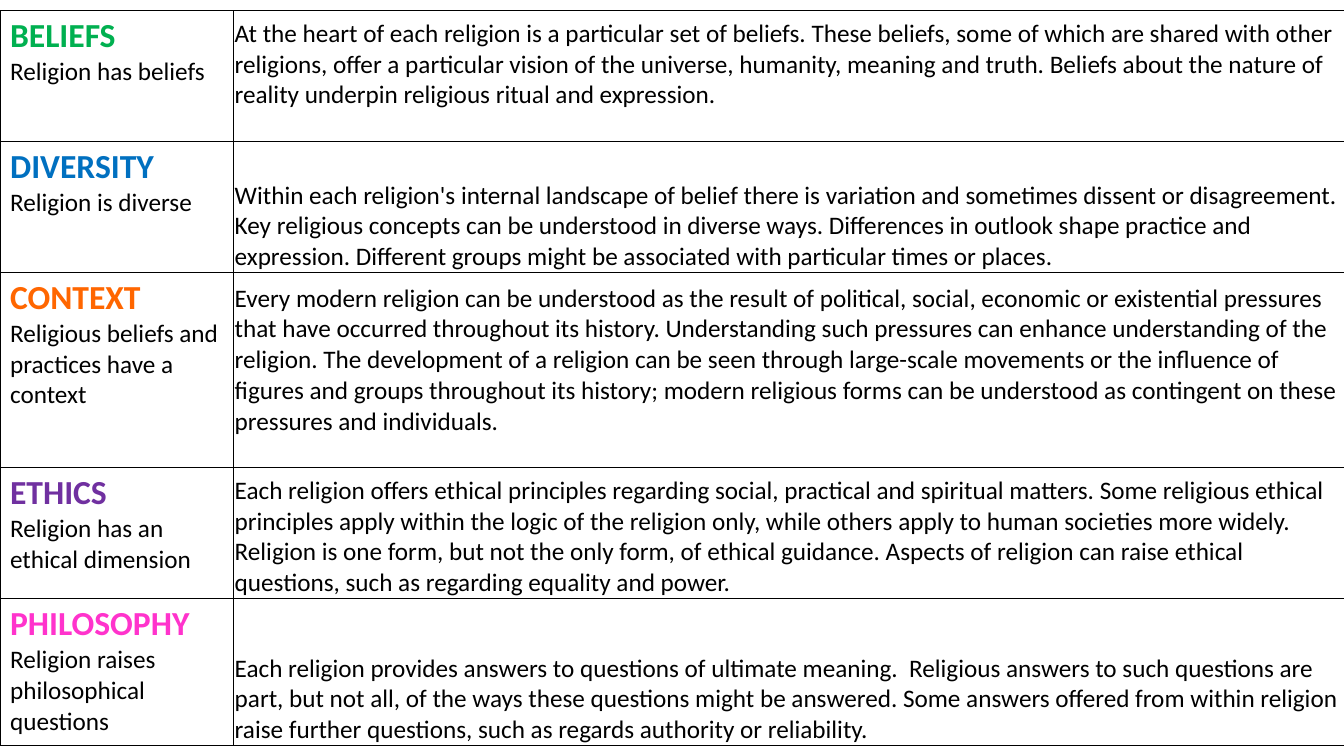
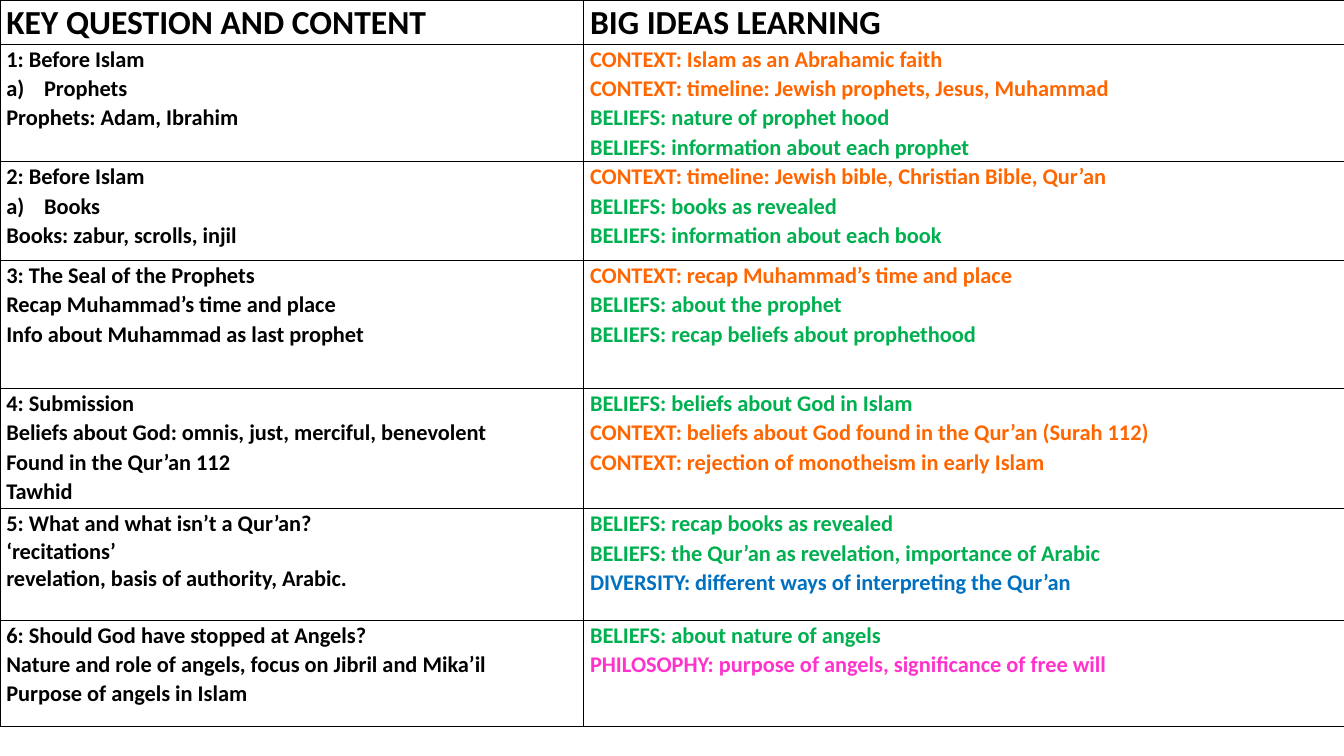
from lxml import etree
from pptx import Presentation
from pptx.dml.color import RGBColor
from pptx.enum.text import MSO_ANCHOR
from pptx.oxml.ns import qn
from pptx.util import Pt

TOP, BOTTOM = MSO_ANCHOR.TOP, MSO_ANCHOR.BOTTOM
FONT = "Calibri"
BLACK = "000000"
IDEA_COLORS = {
    "BELIEFS": "00B050",
    "DIVERSITY": "0070C0",
    "CONTEXT": "FF6600",
    "ETHICS": "7030A0",
    "PHILOSOPHY": "FF33CC",
}
SLIDE_WIDTH, SLIDE_HEIGHT = 960, 540
BORDER_WIDTH = 0.5
HEADING_SIZE, BODY_SIZE, LESSON_SIZE = 24, 18, 16
LESSON_SPACING = 1.07
LETTER_INDENT = 27

# Cell margins: left, top, right, bottom
IDEA_MARGINS = (7.2, 3.6, 7.2, 3.6)
LESSON_MARGINS = (4.5, 0, 4.5, 0)

IDEAS_TOP = 7.5
IDEA_COLUMNS = (167, SLIDE_WIDTH - 167)
# Name, summary, explanation, row height, space below the explanation
IDEAS = [
    ("BELIEFS", "Religion has beliefs",
     "At the heart of each religion is a particular set of beliefs. These beliefs, some of which are "
     "shared with other religions, offer a particular vision of the universe, humanity, meaning and "
     "truth. Beliefs about the nature of reality underpin religious ritual and expression.",
     93.5, 22),
    ("DIVERSITY", "Religion is diverse",
     "Within each religion's internal landscape of belief there is variation and sometimes dissent or "
     "disagreement. Key religious concepts can be understood in diverse ways. Differences in outlook "
     "shape practice and expression. Different groups might be associated with particular times or "
     "places.",
     93.5, 0),
    ("CONTEXT", "Religious beliefs and practices have a context",
     "Every modern religion can be understood as the result of political, social, economic or "
     "existential pressures that have occurred throughout its history. Understanding such pressures "
     "can enhance understanding of the religion. The development of a religion can be seen through "
     "large-scale movements or the influence of figures and groups throughout its history; modern "
     "religious forms can be understood as contingent on these pressures and individuals.",
     139.5, 22),
    ("ETHICS", "Religion has an ethical dimension",
     "Each religion offers ethical principles regarding social, practical and spiritual matters. Some "
     "religious ethical principles apply within the logic of the religion only, while others apply to "
     "human societies more widely. Religion is one form, but not the only form, of ethical guidance. "
     "Aspects of religion can raise ethical questions, such as regarding equality and power.",
     93.5, 0),
    ("PHILOSOPHY", "Religion raises philosophical questions",
     "Each religion provides answers to questions of ultimate meaning.  Religious answers to such "
     "questions are part, but not all, of the ways these questions might be answered. Some answers "
     "offered from within religion raise further questions, such as regards authority or reliability.",
     105, 0),
]

LESSON_COLUMNS = (417, SLIDE_WIDTH - 417)
LESSON_HEADINGS = ("KEY QUESTION AND CONTENT", "BIG IDEAS LEARNING")
LESSON_HEADING_HEIGHT = 31
LETTERED = {"Prophets", "Books"}
SINGLE_SPACED = {"‘recitations’", "revelation, basis of authority, Arabic."}
# Content lines, learning lines, row height
LESSONS = [
    (["1: Before Islam", "Prophets", "Prophets: Adam, Ibrahim"],
     ["CONTEXT: Islam as an Abrahamic faith",
      "CONTEXT: timeline: Jewish prophets, Jesus, Muhammad",
      "BELIEFS: nature of prophet hood",
      "BELIEFS: information about each prophet"], 84),
    (["2: Before Islam", "Books", "Books: zabur, scrolls, injil"],
     ["CONTEXT: timeline: Jewish bible, Christian Bible, Qur’an",
      "BELIEFS: books as revealed",
      "BELIEFS: information about each book"], 70.5),
    (["3: The Seal of the Prophets", "Recap Muhammad’s time and place",
      "Info about Muhammad as last prophet"],
     ["CONTEXT: recap Muhammad’s time and place",
      "BELIEFS: about the prophet",
      "BELIEFS: recap beliefs about prophethood"], 91.5),
    (["4: Submission", "Beliefs about God: omnis, just, merciful, benevolent",
      "Found in the Qur’an 112", "Tawhid"],
     ["BELIEFS: beliefs about God in Islam",
      "CONTEXT: beliefs about God found in the Qur’an (Surah 112)",
      "CONTEXT: rejection of monotheism in early Islam"], 86),
    (["5: What and what isn’t a Qur’an?", "‘recitations’",
      "revelation, basis of authority, Arabic."],
     ["BELIEFS: recap books as revealed",
      "BELIEFS: the Qur’an as revelation, importance of Arabic",
      "DIVERSITY: different ways of interpreting the Qur’an"], 79.5),
    (["6: Should God have stopped at Angels?",
      "Nature and role of angels, focus on Jibril and Mika’il",
      "Purpose of angels in Islam"],
     ["BELIEFS: about nature of angels",
      "PHILOSOPHY: purpose of angels, significance of free will"], 76),
]


def color(hex_string):
    return RGBColor.from_string(hex_string)


def idea_color(text):
    """Return the colour of the big idea named before the first colon."""
    return color(IDEA_COLORS.get(text.split(":")[0], BLACK))


def set_attributes(target, values):
    for name, value in values.items():
        setattr(target, name, value)


def add_borders(cell):
    properties = cell._tc.get_or_add_tcPr()
    for position, side in enumerate(("lnL", "lnR", "lnT", "lnB")):
        line = etree.Element(qn(f"a:{side}"), w=str(Pt(BORDER_WIDTH)))
        fill = etree.SubElement(line, qn("a:solidFill"))
        etree.SubElement(fill, qn("a:srgbClr"), val=BLACK)
        properties.insert(position, line)


def add_letter(paragraph):
    """Number the paragraph a), with a hanging indent."""
    properties = paragraph._p.get_or_add_pPr()
    properties.set("marL", str(Pt(LETTER_INDENT)))
    properties.set("indent", str(-Pt(LETTER_INDENT)))
    etree.SubElement(properties, qn("a:buFont"), typeface="+mj-lt")
    etree.SubElement(properties, qn("a:buAutoNum"), type="alphaLcParenR")


def fill_cell(cell, lines, margins, anchor=TOP, spacing=None):
    """Write lines of (text, size, bold), one paragraph each."""
    left, top, right, bottom = map(Pt, margins)
    set_attributes(cell, {"margin_left": left, "margin_top": top, "margin_right": right,
                          "margin_bottom": bottom, "vertical_anchor": anchor})
    cell.fill.background()
    add_borders(cell)
    frame = cell.text_frame
    for index, (text, size, bold) in enumerate(lines):
        paragraph = frame.add_paragraph() if index else frame.paragraphs[0]
        if spacing and text not in SINGLE_SPACED:
            paragraph.line_spacing = spacing
        if text in LETTERED:
            add_letter(paragraph)
        run = paragraph.add_run()
        run.text = text
        set_attributes(run.font, {"name": FONT, "size": Pt(size), "bold": bold})
        run.font.color.rgb = idea_color(text)


def add_table_slide(presentation, top, widths, heights):
    slide = presentation.slides.add_slide(presentation.slide_layouts[6])
    table = slide.shapes.add_table(len(heights), len(widths), Pt(0), Pt(top),
                                   Pt(sum(widths)), Pt(sum(heights))).table
    set_attributes(table, {"first_row": False, "horz_banding": False})
    for column, width in zip(table.columns, widths):
        column.width = Pt(width)
    for row, height in zip(table.rows, heights):
        row.height = Pt(height)
    return table


def add_ideas_slide(presentation):
    table = add_table_slide(presentation, IDEAS_TOP, IDEA_COLUMNS, [idea[3] for idea in IDEAS])
    for row, (name, summary, explanation, _, space_below) in enumerate(IDEAS):
        fill_cell(table.cell(row, 0),
                  [(name, HEADING_SIZE, True), (summary, BODY_SIZE, False)], IDEA_MARGINS)
        fill_cell(table.cell(row, 1), [(explanation, BODY_SIZE, False)],
                  (0.7, 0.7, 0.7, space_below), BOTTOM)


def add_lessons_slide(presentation):
    heights = [LESSON_HEADING_HEIGHT] + [lesson[2] for lesson in LESSONS]
    table = add_table_slide(presentation, 0, LESSON_COLUMNS, heights)
    rows = [[[heading] for heading in LESSON_HEADINGS]] + [lesson[:2] for lesson in LESSONS]
    for row, cells in enumerate(rows):
        size = LESSON_SIZE if row else HEADING_SIZE
        for column, texts in enumerate(cells):
            fill_cell(table.cell(row, column), [(text, size, True) for text in texts],
                      LESSON_MARGINS, spacing=LESSON_SPACING)


def main():
    presentation = Presentation()
    set_attributes(presentation, {"slide_width": Pt(SLIDE_WIDTH), "slide_height": Pt(SLIDE_HEIGHT)})
    add_ideas_slide(presentation)
    add_lessons_slide(presentation)
    presentation.save("out.pptx")


if __name__ == "__main__":
    main()
